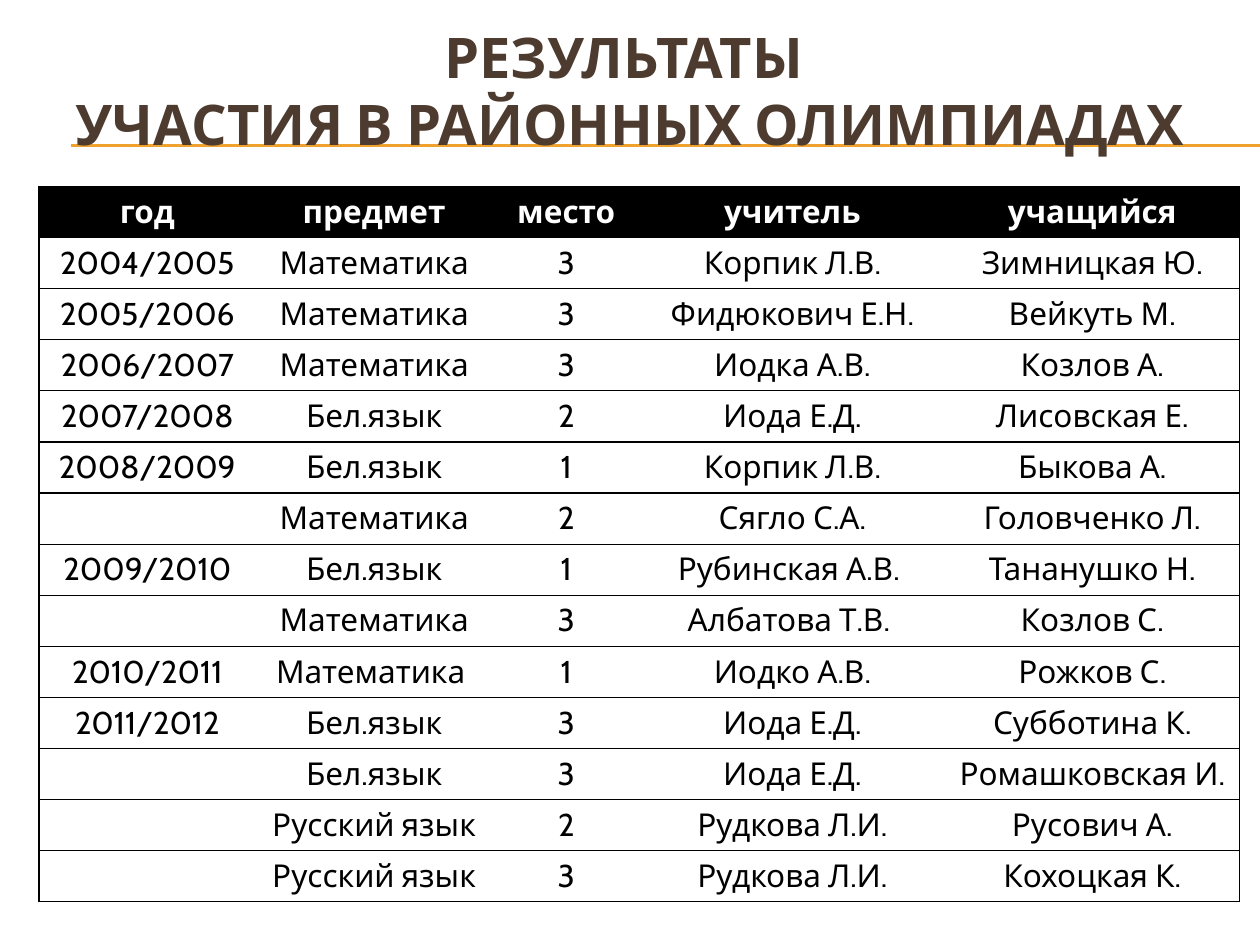
from lxml import etree
from pptx import Presentation
from pptx.dml.color import RGBColor
from pptx.enum.shapes import MSO_CONNECTOR
from pptx.enum.text import MSO_ANCHOR, PP_ALIGN
from pptx.oxml.ns import qn
from pptx.util import Inches, Pt

LINE = MSO_CONNECTOR.STRAIGHT
CENTER = PP_ALIGN.CENTER
MIDDLE = MSO_ANCHOR.MIDDLE
BLACK = RGBColor(0x00, 0x00, 0x00)
WHITE = RGBColor(0xFF, 0xFF, 0xFF)
BROWN = RGBColor(0x4E, 0x3B, 0x30)
ORANGE = RGBColor(0xF0, 0xA2, 0x2E)
FONT = "Cabin"

# Content
TITLE = "РЕЗУЛЬТАТЫ \vУЧАСТИЯ В РАЙОННЫХ ОЛИМПИАДАХ"
ROWS = [
    ("год", "предмет", "место", "учитель", "учащийся"),
    ("2004/2005", "Математика", "3", "Корпик Л.В.", "Зимницкая Ю."),
    ("2005/2006", "Математика", "3", "Фидюкович Е.Н.", "Вейкуть М."),
    ("2006/2007", "Математика", "3", "Иодка А.В.", "Козлов А."),
    ("2007/2008", "Бел.язык", "2", "Иода Е.Д.", "Лисовская Е."),
    ("2008/2009", "Бел.язык", "1", "Корпик Л.В.", "Быкова А."),
    ("", "Математика", "2", "Сягло С.А.", "Головченко Л."),
    ("2009/2010", "Бел.язык", "1", "Рубинская А.В. ", "Тананушко Н."),
    ("", "Математика", "3", "Албатова Т.В. ", "Козлов С."),
    ("2010/2011", "Математика ", "1", "Иодко А.В.", "Рожков С."),
    ("2011/2012", "Бел.язык", "3", "Иода Е.Д.", "Субботина К."),
    ("", "Бел.язык", "3", "Иода Е.Д.", "Ромашковская И."),
    ("", "Русский язык", "2", "Рудкова Л.И.", "Русович А."),
    ("", "Русский язык", "3", "Рудкова Л.И.", "Кохоцкая К."),
]
COL_WIDTHS = [1.72, 1.88, 1.17, 2.42, 2.34]
TABLE_LEFT, TABLE_TOP, TABLE_HEIGHT = 0.31, 1.48, 5.68
RULE_YS = [1.15, 1.16]


def format_paragraph(p, size, color, bold):
    p.alignment = CENTER
    p.font.size = Pt(size)
    for r in p.runs:
        r.font.name = FONT
        r.font.size = Pt(size)
        r.font.bold = bold
        r.font.color.rgb = color


def set_borders(cell, visible):
    """Draw the sides in visible and leave the others without a line."""
    tcPr = cell._tc.get_or_add_tcPr()
    for i, side in enumerate("LRTB"):
        ln = etree.Element(qn(f"a:ln{side}"), w=str(Pt(0.79)))
        if side in visible:
            fill = etree.SubElement(ln, qn("a:solidFill"))
            etree.SubElement(fill, qn("a:srgbClr"), val=str(BLACK))
        else:
            etree.SubElement(ln, qn("a:noFill"))
        tcPr.insert(i, ln)


prs = Presentation()
prs.slide_width, prs.slide_height = Inches(10), Inches(7.5)
s = prs.slides.add_slide(prs.slide_layouts[6])

# Double rule behind the title
for y in RULE_YS:
    rule = s.shapes.add_connector(LINE, Inches(0.56), Inches(y), Inches(10), Inches(y))
    rule.line.color.rgb = ORANGE
    rule.line.width = Pt(0.75)
    etree.SubElement(rule._element.spPr, qn("a:effectLst"))

# Title
tf = s.shapes.add_textbox(0, 0, Inches(10), Inches(1.42)).text_frame
tf.word_wrap = True
tf.vertical_anchor = MIDDLE
tf.text = TITLE
format_paragraph(tf.paragraphs[0], 32, BROWN, True)

# Results table
table = s.shapes.add_table(
    len(ROWS), len(COL_WIDTHS), Inches(TABLE_LEFT), Inches(TABLE_TOP),
    Inches(sum(COL_WIDTHS)), Inches(TABLE_HEIGHT)).table
for column, width in zip(table.columns, COL_WIDTHS):
    column.width = Inches(width)

last_col = len(COL_WIDTHS) - 1
for i, row in enumerate(ROWS):
    header = i == 0
    table.rows[i].height = Inches(TABLE_HEIGHT / len(ROWS))
    for j, text in enumerate(row):
        cell = table.cell(i, j)
        if header:
            cell.fill.solid()
            cell.fill.fore_color.rgb = BLACK
        else:
            cell.fill.background()
        cell.text = text
        format_paragraph(cell.text_frame.paragraphs[0], 18,
                         WHITE if header else BLACK, header)
        sides = "TB" + ("L" if j == 0 else "") + ("R" if j == last_col else "")
        set_borders(cell, sides)

prs.save("out.pptx")
